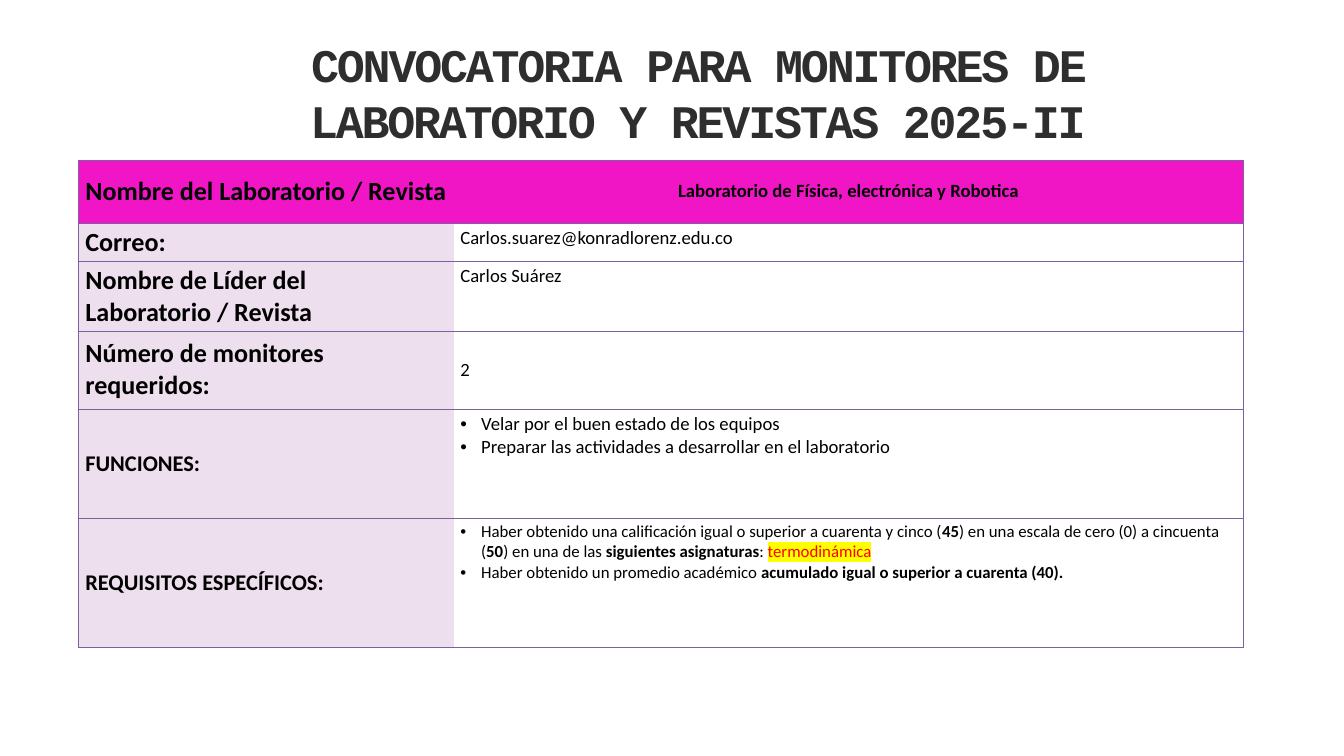
import pptx
import pptx.dml.color
import pptx.enum.text
import pptx.oxml
import pptx.oxml.ns
import pptx.util

Inches = pptx.util.Inches
Pt = pptx.util.Pt
RGB = pptx.dml.color.RGBColor
ALIGN = pptx.enum.text.PP_ALIGN
ANCHOR = pptx.enum.text.MSO_ANCHOR

BLACK = RGB(0, 0, 0)
GREY = RGB(0x2E, 0x2E, 0x2E)
PINK = RGB(0xF0, 0x16, 0xC6)
LILAC = RGB(0xED, 0xDF, 0xED)
PURPLE = RGB(0x7D, 0x60, 0xA0)
RED = RGB(0xFF, 0, 0)
YELLOW = RGB(0xFF, 0xFF, 0)
NS = 'xmlns:a="http://schemas.openxmlformats.org/drawingml/2006/main"'


def write(frame, text, size=20, font="Calibri", color=BLACK, bold=False,
          align=ALIGN.LEFT, bullet=False, space=None, line=None):
    """Fill a frame with paragraphs, each a string or a list of (text, format) runs."""
    frame.word_wrap = True
    for i, runs in enumerate(text if isinstance(text, list) else [text]):
        para = frame.add_paragraph() if i else frame.paragraphs[0]
        para.alignment = align
        if line:
            para.line_spacing = Pt(line)
        if bullet:
            props = para._p.get_or_add_pPr()
            props.set("marL", str(Inches(0.31)))
            props.set("indent", str(Inches(-0.31)))
            props.append(pptx.oxml.parse_xml(f'<a:buFont {NS} typeface="Arial"/>'))
            props.append(pptx.oxml.parse_xml(f'<a:buChar {NS} char="•"/>'))
        para.font.size = Pt(size)
        for words, form in [(runs, {})] if isinstance(runs, str) else runs:
            run = para.add_run()
            run.text = words
            run.font.size = Pt(size)
            run.font.name = font
            run.font.bold = form.get("bold", bold)
            run.font.color.rgb = form.get("color", color)
            props = run._r.get_or_add_rPr()
            if space:
                props.set("spc", str(round(space * 100)))
            if "mark" in form:
                mark = pptx.oxml.parse_xml(
                    f'<a:highlight {NS}><a:srgbClr val="{form["mark"]}"/></a:highlight>')
                props.find(pptx.oxml.ns.qn("a:solidFill")).addnext(mark)


class Deck:
    """Holds the style and the current slide."""

    def __init__(self, edge=PURPLE, width=0.75):
        self.edge, self.width = edge, width
        self.prs = pptx.Presentation()
        self.prs.slide_width = Inches(20)
        self.prs.slide_height = Inches(11.25)
        self.slide = self.prs.slides.add_slide(self.prs.slide_layouts[6])

    def text(self, box, text, **form):
        frame = self.slide.shapes.add_textbox(*map(Inches, box)).text_frame
        frame.margin_left = frame.margin_right = 0
        frame.margin_top = frame.margin_bottom = 0
        write(frame, text, **form)

    def border(self, cell, sides):
        props = cell._tc.get_or_add_tcPr()
        for i, side in enumerate("LRTB"):
            paint = (f'<a:solidFill><a:srgbClr val="{self.edge}"/></a:solidFill>'
                     if side in sides else "<a:noFill/>")
            props.insert(i, pptx.oxml.parse_xml(
                f'<a:ln{side} {NS} w="{Pt(self.width)}">{paint}</a:ln{side}>'))

    def table(self, left, top, cols, rows, cells):
        table = self.slide.shapes.add_table(
            len(rows), len(cols), Inches(left), Inches(top),
            Inches(sum(cols)), Inches(sum(rows))).table
        table.first_row = table.horz_banding = False
        for col, width in zip(table.columns, cols):
            col.width = Inches(width)
        for r, (height, line) in enumerate(zip(rows, cells)):
            table.rows[r].height = Inches(height)
            for c, (text, fill, anchor, form) in enumerate(line):
                cell = table.cell(r, c)
                cell.vertical_anchor = anchor
                if fill is None:
                    cell.fill.background()
                else:
                    cell.fill.solid()
                    cell.fill.fore_color.rgb = fill
                self.border(cell, "RTB" if c else "LTB")
                write(cell.text_frame, text, **form)


def label(text, size=28, fill=LILAC):
    return text, fill, ANCHOR.MIDDLE, {"size": size, "bold": True}


def value(text, anchor=ANCHOR.TOP, fill=None, **form):
    return text, fill, anchor, form


def main():
    deck = Deck()
    deck.text((3.16, 0.53, 14.45, 2.52),
              "CONVOCATORIA PARA MONITORES DE LABORATORIO Y REVISTAS 2025-II",
              size=50, font="Courier New", color=GREY, bold=True,
              align=ALIGN.CENTER, space=-2.4, line=60.1)
    strong = {"bold": True}
    duties = ["Velar por el buen estado de los equipos",
              "Preparar las actividades a desarrollar en el laboratorio"]
    needs = [
        [("Haber obtenido una calificación igual o superior a cuarenta y cinco (", {}),
         ("45", strong), (") en una escala de cero (0) a cincuenta (", {}),
         ("50", strong), (") en una de las ", {}),
         ("siguientes asignaturas", strong), (": ", {}),
         ("termodinámica", {"color": RED, "mark": YELLOW})],
        [("Haber obtenido un promedio académico ", {}),
         ("acumulado igual o superior a cuarenta (40).", strong)],
    ]
    deck.table(1.17, 2.38, [5.58, 11.75], [0.94, 0.56, 1.04, 1.16, 1.62, 1.93], [
        [label("Nombre del Laboratorio / Revista", fill=PINK),
         value("Laboratorio de Física, electrónica y Robotica", ANCHOR.MIDDLE,
               PINK, bold=True, align=ALIGN.CENTER)],
        [label("Correo:"), value("Carlos.suarez@konradlorenz.edu.co")],
        [label("Nombre de Líder del Laboratorio / Revista"), value("Carlos Suárez")],
        [label("Número de monitores requeridos:"), value("2", ANCHOR.MIDDLE)],
        [label("FUNCIONES:", 24), value(duties, bullet=True)],
        [label("REQUISITOS ESPECÍFICOS:", 24), value(needs, size=18, bullet=True)],
    ])
    deck.prs.save("out.pptx")


if __name__ == "__main__":
    main()
